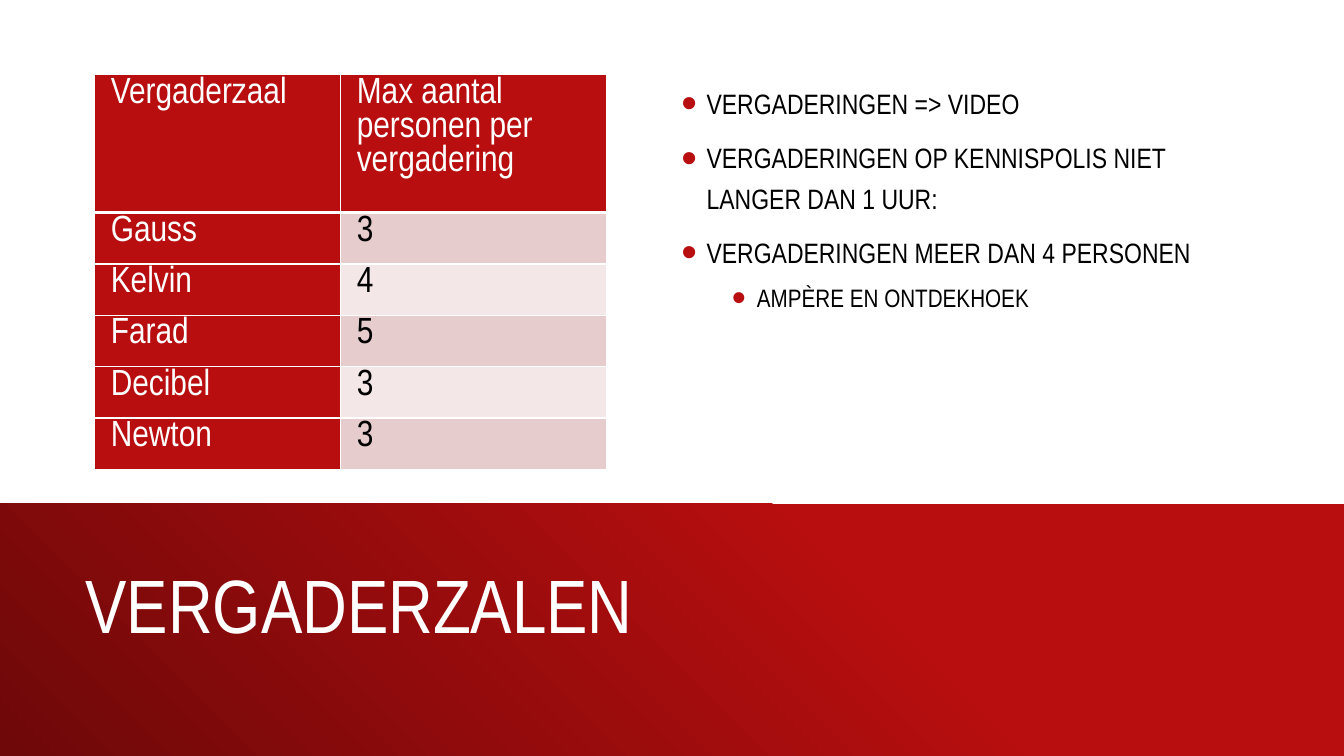
from lxml.etree import SubElement
from pptx import Presentation
from pptx.dml.color import RGBColor
from pptx.enum.shapes import MSO_SHAPE
from pptx.enum.text import MSO_ANCHOR, MSO_AUTO_SIZE, PP_ALIGN
from pptx.oxml.ns import qn
from pptx.util import Pt

TITLE = "VERGADERZALEN"
POINTS = [
    (0, "VERGADERINGEN => VIDEO"),
    (0, "VERGADERINGEN OP KENNISPOLIS NIET LANGER DAN 1 UUR:"),
    (0, "VERGADERINGEN MEER DAN 4 PERSONEN"),
    (1, "AMPÈRE EN ONTDEKHOEK"),
]
ROOMS = [
    ("Vergaderzaal", "Max aantal personen per vergadering"),
    ("Gauss", "3"),
    ("Kelvin", "4"),
    ("Farad", "5"),
    ("Decibel", "3"),
    ("Newton", "3"),
]
COLORS = {"red": "B80E0F", "dark": "6E0809", "white": "FFFFFF",
          "black": "000000", "pink": "E6CCCC", "pale": "F3E7E7"}
FONT = "Arial Narrow"
WIDE, HIGH, BAND = 960, 540, 360
COLS = (175.7, 190.1)
HEAD, ROW = 98.6, 36.7
# level: (size, left indent, space before)
LEVELS = {0: (20, 18, 10), 1: (18, 54, 5)}


def rgb(name):
    return RGBColor.from_string(COLORS[name])


def apply(obj, **values):
    for key, value in values.items():
        setattr(obj, key, value)


def write(par, text, size, color):
    run = par.add_run()
    run.text = text
    apply(run.font, name=FONT, size=Pt(size))
    run.font.color.rgb = rgb(color)


def place(shape, left, top, width, height):
    apply(shape, left=Pt(left), top=Pt(top), width=Pt(width), height=Pt(height))


def bullet(par, left):
    props = par._p.get_or_add_pPr()
    props.set("marL", str(Pt(left)))
    props.set("indent", str(Pt(-18)))
    tint = SubElement(props, qn("a:buClr"))
    SubElement(tint, qn("a:srgbClr"), val=COLORS["red"])
    SubElement(props, qn("a:buSzPct"), val="160000")
    SubElement(props, qn("a:buFont"), typeface="Arial")
    SubElement(props, qn("a:buChar"), char="•")


def border(cell, **widths):
    props = cell._tc.get_or_add_tcPr()
    for side, width in widths.items():
        line = SubElement(props, qn("a:ln" + side), w=str(Pt(width)))
        fill = SubElement(line, qn("a:solidFill"))
        SubElement(fill, qn("a:srgbClr"), val=COLORS["white"])


def add_band(slide):
    band = slide.shapes.add_shape(
        MSO_SHAPE.RECTANGLE, Pt(0), Pt(BAND), Pt(WIDE), Pt(HIGH - BAND))
    band.shadow.inherit = False
    band.line.fill.background()
    band.fill.gradient()
    band.fill.gradient_angle = 225
    for stop, (spot, name) in zip(band.fill.gradient_stops,
                                  ((0.34, "red"), (1, "dark"))):
        stop.position = spot
        stop.color.rgb = rgb(name)
    slide.shapes._spTree.insert(2, band._element)


def add_title(slide):
    title = slide.shapes.title
    place(title, 54, 389.5, 849.6, 90.7)
    apply(title.text_frame, vertical_anchor=MSO_ANCHOR.MIDDLE,
          auto_size=MSO_AUTO_SIZE.NONE, word_wrap=True)
    par = title.text_frame.paragraphs[0]
    apply(par, alignment=PP_ALIGN.LEFT, line_spacing=0.9)
    write(par, TITLE, 54, "white")


def add_points(slide):
    body = slide.placeholders[1]
    place(body, 479.5, 53.3, 424.1, 276.5)
    frame = body.text_frame
    apply(frame, auto_size=MSO_AUTO_SIZE.NONE, word_wrap=True,
          vertical_anchor=MSO_ANCHOR.TOP)
    for i, (level, text) in enumerate(POINTS):
        par = frame.add_paragraph() if i else frame.paragraphs[0]
        size, left, gap = LEVELS[level]
        bullet(par, left)
        apply(par, level=level, line_spacing=1.2,
              space_before=Pt(gap if i else 0))
        write(par, text, size, "black")


def add_rooms(slide):
    rows = [HEAD] + [ROW] * (len(ROOMS) - 1)
    table = slide.shapes.add_table(
        len(rows), len(COLS), Pt(67.7), Pt(53.3),
        Pt(sum(COLS)), Pt(sum(rows))).table
    for col, width in zip(table.columns, COLS):
        col.width = Pt(width)
    for r, texts in enumerate(ROOMS):
        table.rows[r].height = Pt(rows[r])
        for c, text in enumerate(texts):
            cell = table.cell(r, c)
            solid = r == 0 or c == 0
            apply(cell, margin_left=Pt(11.5), margin_right=Pt(11.5),
                  margin_top=Pt(1.4), margin_bottom=Pt(0))
            border(cell, L=1, R=1, T=3 if r == 1 else 1, B=3 if r == 0 else 1)
            cell.fill.solid()
            cell.fill.fore_color.rgb = rgb(
                "red" if solid else "pink" if r % 2 else "pale")
            write(cell.text_frame.paragraphs[0], text, 26,
                  "white" if solid else "black")


def main():
    deck = Presentation()
    apply(deck, slide_width=Pt(WIDE), slide_height=Pt(HIGH))
    slide = deck.slides.add_slide(deck.slide_layouts[1])
    add_band(slide)
    add_title(slide)
    add_points(slide)
    add_rooms(slide)
    deck.save("out.pptx")


if __name__ == "__main__":
    main()
